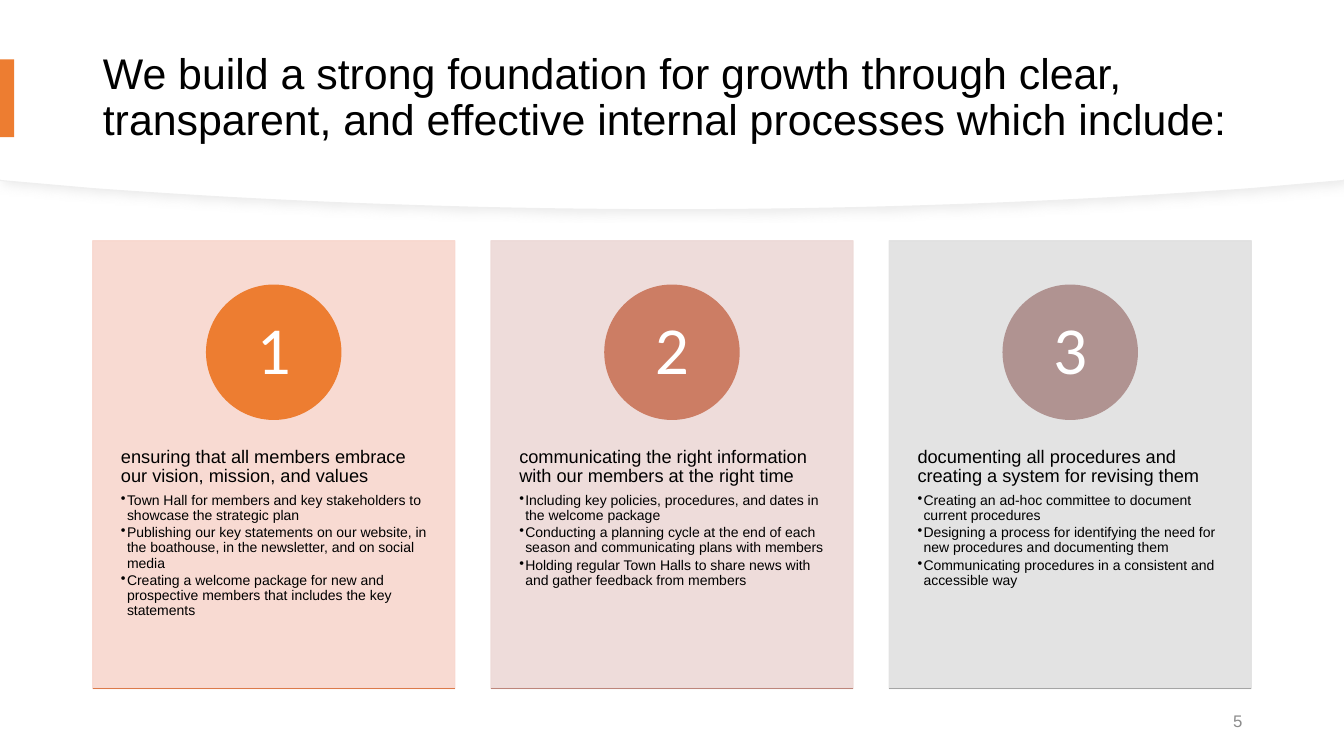
from dataclasses import dataclass

import lxml.etree
import pptx
import pptx.dml.color
import pptx.enum.shapes
import pptx.enum.text
import pptx.oxml
import pptx.oxml.ns
import pptx.util
from pptx.util import Inches

ALIGN = pptx.enum.text.PP_ALIGN
ANCHOR = pptx.enum.text.MSO_ANCHOR
SHAPE = pptx.enum.shapes.MSO_SHAPE
qn = pptx.oxml.ns.qn


@dataclass(frozen=True)
class Theme:
    body_font: str = "Arial"
    number_font: str = "Calibri"
    title_size: float = 30.6
    heading_size: float = 13
    bullet_size: float = 10
    number_size: float = 48
    page_size: float = 12
    text: str = "000000"
    white: str = "FFFFFF"
    accent: str = "ED7D31"
    header_edge: str = "EFEFEF"
    header_shadow: str = "D9D9D9"
    page: str = "8C8C8C"
    # card, circle and base rule of each column
    columns: tuple = (
        ("F8D7CE", "ED7D31", "DC7A4B"),
        ("EDD9D7", "CC7D64", "BD867B"),
        ("E1E1E1", "B09391", "A5A5A5"),
    )


SLIDE_WIDTH = 13.33
CARD_LEFT, CARD_TOP, CARD_WIDTH, CARD_HEIGHT = 0.92, 2.39, 3.59, 4.44
CARD_STEP = 3.95
CIRCLE = 1.33

TITLE = ("We build a strong foundation for growth through clear, transparent, "
         "and effective internal processes which include:")
PROCESSES = [
    ("ensuring that all members embrace our vision, mission, and values",
     ["Town Hall for members and key stakeholders to showcase the strategic plan",
      "Publishing our key statements on our website, in the boathouse, in the "
      "newsletter, and on social media",
      "Creating a welcome package for new and prospective members that includes "
      "the key statements"]),
    ("communicating the right information with our members at the right time",
     ["Including key policies, procedures, and dates in the welcome package",
      "Conducting a planning cycle at the end of each season and communicating "
      "plans with members",
      "Holding regular Town Halls to share news with and gather feedback from members"]),
    ("documenting all procedures and creating a system for revising them",
     ["Creating an ad-hoc committee to document current procedures",
      "Designing a process for identifying the need for new procedures and "
      "documenting them",
      "Communicating procedures in a consistent and accessible way"]),
]


def rgb(value):
    return pptx.dml.color.RGBColor.from_string(value)


def bezier(p0, p1, p2, p3, steps=30):
    """Points along a cubic curve, without its start."""
    for i in range(1, steps + 1):
        t = i / steps
        u = 1 - t
        yield tuple(u**3 * a + 3 * u * u * t * b + 3 * u * t * t * c + t**3 * d
                    for a, b, c, d in zip(p0, p1, p2, p3))


def set_alpha(fill_parent, percent):
    color = fill_parent.find(qn("a:solidFill"))[0]
    lxml.etree.SubElement(color, qn("a:alpha")).set("val", str(percent * 1000))


class SlideBuilder:
    def __init__(self, slide, theme):
        self.slide, self.shapes, self.theme = slide, slide.shapes, theme

    def paint(self, shape, fill, line=None, line_width=1):
        shape.shadow.inherit = False
        shape.fill.solid()
        shape.fill.fore_color.rgb = rgb(fill)
        if line:
            shape.line.color.rgb = rgb(line)
            shape.line.width = pptx.util.Pt(line_width)
        else:
            shape.line.fill.background()

    def block(self, kind, left, top, width, height, fill, line=None, opacity=100):
        shape = self.shapes.add_shape(
            kind, Inches(left), Inches(top), Inches(width), Inches(height))
        self.paint(shape, fill, line)
        if opacity < 100:
            properties = shape._element.spPr
            set_alpha(properties, opacity)
            set_alpha(properties.find(qn("a:ln")), opacity)

    def header_band(self, depth, line=None):
        """White band from the slide top, with a curved lower edge."""
        side, shoulder, control = depth - 0.29, depth - 0.21, depth - 0.08
        middle = (6.67, depth)
        outline = [(SLIDE_WIDTH, 0), (SLIDE_WIDTH, side), (12.42, shoulder),
                   *bezier((12.42, shoulder), (10.65, control), (8.71, depth), middle),
                   *bezier(middle, (4.63, depth), (2.68, control), (0.91, shoulder)),
                   (0, side)]
        builder = self.shapes.build_freeform(0, 0)
        builder.add_line_segments([(Inches(x), Inches(y)) for x, y in outline], close=True)
        band = builder.convert_to_shape()
        self.paint(band, self.theme.white, line, 0.75)
        return band

    def soft_shadow(self, shape):
        effects = shape._element.spPr.find(qn("a:effectLst"))
        effects.append(pptx.oxml.parse_xml(
            f'<a:outerShdw {pptx.oxml.ns.nsdecls("a")} blurRad="88900" dist="38100" '
            f'dir="2700000" algn="tl" rotWithShape="0">'
            f'<a:srgbClr val="{self.theme.header_shadow}"><a:alpha val="50000"/></a:srgbClr>'
            '</a:outerShdw>'))

    def rule(self, left, top, width, color):
        line = self.shapes.add_connector(
            pptx.enum.shapes.MSO_CONNECTOR.STRAIGHT,
            Inches(left), Inches(top), Inches(left + width), Inches(top))
        line.line.color.rgb = rgb(color)
        line.line.width = pptx.util.Pt(1)
        lxml.etree.SubElement(line._element.spPr, qn("a:effectLst"))

    def style(self, paragraph, size, color, font=None, align=ALIGN.LEFT,
              spacing=0.9, after=0):
        paragraph.font.size = pptx.util.Pt(size)
        paragraph.font.name = font or self.theme.body_font
        paragraph.font.color.rgb = rgb(color)
        paragraph.alignment = align
        paragraph.line_spacing = spacing
        paragraph.space_after = pptx.util.Pt(after)

    def title(self, text):
        title = self.shapes.title
        self.shapes._spTree.append(title._element)  # in front of the header band
        title.left, title.top = Inches(0.92), Inches(0.28)
        title.width, title.height = Inches(11.5), Inches(1.39)
        title.text_frame.text = text
        title.text_frame.vertical_anchor = ANCHOR.MIDDLE
        title.text_frame.auto_size = pptx.enum.text.MSO_AUTO_SIZE.NONE
        self.style(title.text_frame.paragraphs[0], self.theme.title_size, self.theme.text)

    def text_frame(self, left, top, width, height, inset=(0.1, 0.05), anchor=ANCHOR.TOP):
        frame = self.shapes.add_textbox(
            Inches(left), Inches(top), Inches(width), Inches(height)).text_frame
        frame.word_wrap = True
        frame.vertical_anchor = anchor
        frame.margin_left = frame.margin_right = Inches(inset[0])
        frame.margin_top = frame.margin_bottom = Inches(inset[1])
        return frame

    def label(self, text, box, size, color, inset=(0.1, 0.05), **style):
        frame = self.text_frame(*box, inset=inset, anchor=ANCHOR.MIDDLE)
        frame.text = text
        self.style(frame.paragraphs[0], size, color, **style)

    def details(self, left, heading, bullets):
        theme = self.theme
        frame = self.text_frame(left, 4.08, CARD_WIDTH, 2.66, inset=(0.28, 0.36))
        frame.text = heading
        self.style(frame.paragraphs[0], theme.heading_size, theme.text, after=4.55)
        for bullet in bullets:
            paragraph = frame.add_paragraph()
            paragraph.text = bullet
            paragraph.level = 1
            self.style(paragraph, theme.bullet_size, theme.text, after=1.5)
            properties = paragraph._p.get_or_add_pPr()
            properties.set("marL", str(Inches(0.06)))
            properties.set("indent", str(-Inches(0.06)))
            mark = pptx.oxml.parse_xml(
                f'<a:buChar {pptx.oxml.ns.nsdecls("a")} char="•"/>')
            properties.find(qn("a:defRPr")).addprevious(mark)

    def card(self, index, heading, bullets):
        background, circle, base = self.theme.columns[index]
        left = CARD_LEFT + index * CARD_STEP
        center = left + CARD_WIDTH / 2
        self.block(SHAPE.RECTANGLE, left, CARD_TOP, CARD_WIDTH, CARD_HEIGHT,
                   background, background, opacity=90)
        self.details(left, heading, bullets)
        self.block(SHAPE.OVAL, center - CIRCLE / 2, 2.83, CIRCLE, CIRCLE, circle, circle)
        self.label(str(index + 1), (center - 0.47, 3.03, 0.94, 0.94),
                   self.theme.number_size, self.theme.white, inset=(0.1, 0.01),
                   font=self.theme.number_font, align=ALIGN.CENTER)
        self.rule(left, CARD_TOP + CARD_HEIGHT, CARD_WIDTH, base)


def main():
    theme = Theme()
    deck = pptx.Presentation()
    deck.slide_width, deck.slide_height = Inches(SLIDE_WIDTH), Inches(7.5)
    page = SlideBuilder(deck.slides.add_slide(deck.slide_layouts[5]), theme)
    page.soft_shadow(page.header_band(2.08, theme.header_edge))
    page.header_band(2.07)
    page.title(TITLE)
    page.block(SHAPE.RECTANGLE, 0, 0.59, 0.14, 0.77, theme.accent)
    for index, (heading, bullets) in enumerate(PROCESSES):
        page.card(index, heading, bullets)
    page.label("5", (9.42, 6.95, 3, 0.4), theme.page_size, theme.page,
               align=ALIGN.RIGHT, spacing=1.0)
    deck.save("out.pptx")


if __name__ == "__main__":
    main()
